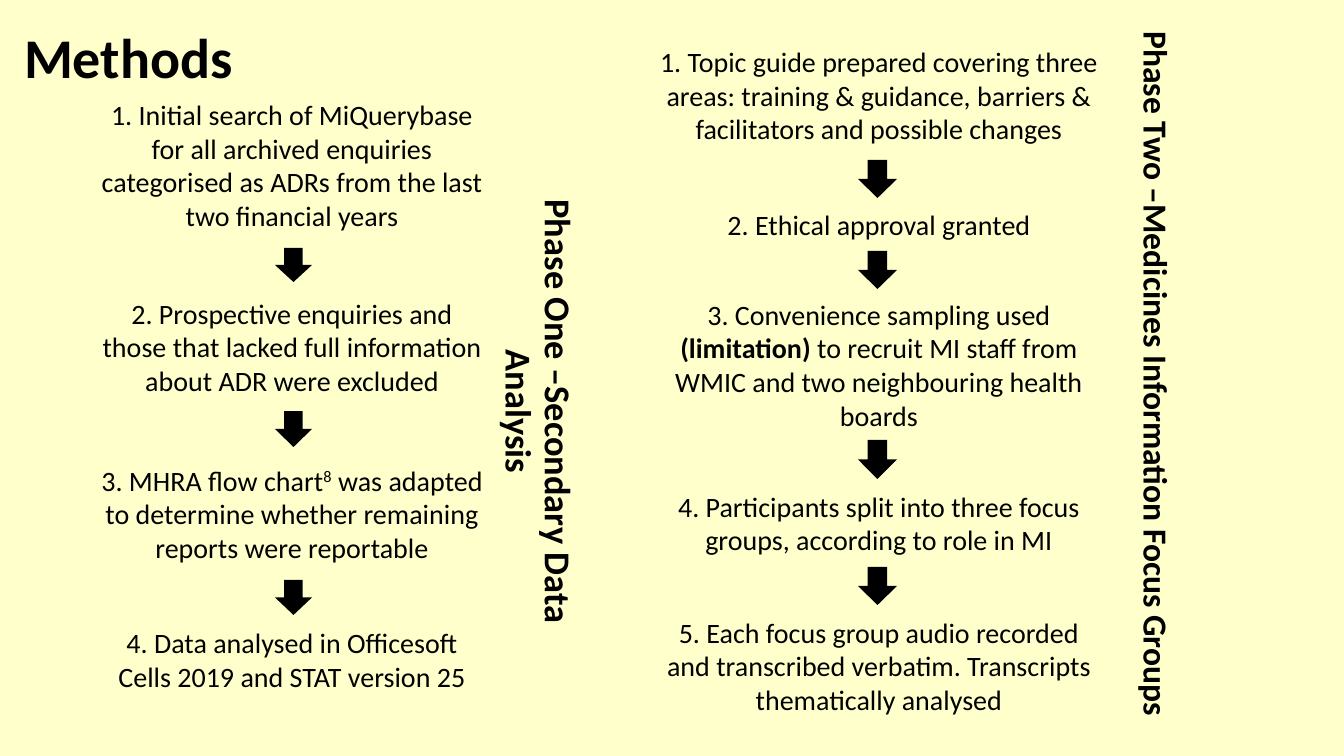
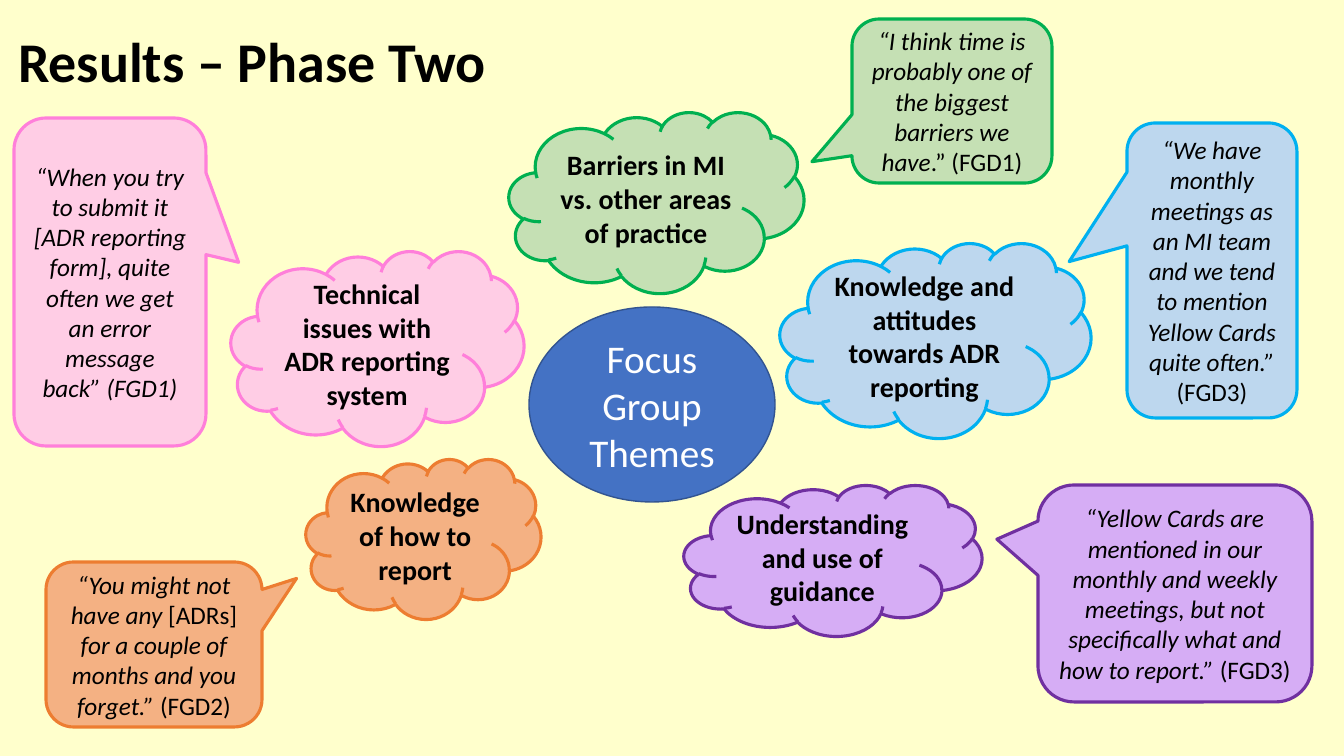
"""Build the study methods and focus group results slides."""
from pptx import Presentation
from pptx.dml.color import RGBColor
from pptx.enum.shapes import MSO_SHAPE
from pptx.enum.text import MSO_ANCHOR, PP_ALIGN
from pptx.util import Emu, Pt

SLIDE_WIDTH, SLIDE_HEIGHT = 1344, 756
EMU_PER_PX = 12192000 / SLIDE_WIDTH

CREAM = RGBColor(0xFF, 0xFF, 0xCC)
BLACK = RGBColor(0x00, 0x00, 0x00)
WHITE = RGBColor(0xFF, 0xFF, 0xFF)
BLUE = RGBColor(0x44, 0x72, 0xC4)
NAVY = RGBColor(0x32, 0x54, 0x91)
LILAC = RGBColor(0xD6, 0xAD, 0xF5)
PURPLE = RGBColor(0x70, 0x30, 0xA0)
PEACH = RGBColor(0xF4, 0xB1, 0x83)
ORANGE = RGBColor(0xED, 0x7D, 0x31)
PALE_BLUE = RGBColor(0xBD, 0xD7, 0xEE)
SKY = RGBColor(0x00, 0xB0, 0xF0)
PALE_PINK = RGBColor(0xFF, 0xCD, 0xE5)
PINK = RGBColor(0xFF, 0x7F, 0xDA)
PALE_GREEN = RGBColor(0xC5, 0xE0, 0xB4)
GREEN = RGBColor(0x00, 0xB0, 0x50)

FRAME_FORMAT = {"word_wrap": True, "vertical_anchor": MSO_ANCHOR.MIDDLE}
TITLE_FONT = {"size": Pt(40), "bold": True}
STEP_FONT = {"size": Pt(20), "bold": False}
THEME_FONT = {"size": Pt(20), "bold": True}
QUOTE_FONT = {"size": Pt(18), "italic": True}
CENTRE_FONT = {"size": Pt(28)}
BOLD = {"bold": True}
UPRIGHT = {"italic": False}
SUPERSCRIPT = {"baseline": "30000"}

METHODS_TITLE = ("Methods", (14, 1, 897, 119))
RESULTS_TITLE = ("Results – Phase Two", (8, 5, 498, 119))

PHASES = [
    {
        "heading": "Phase One –Secondary Data Analysis",
        "heading_box": (482, 134, 110, 555),
        "heading_size": 26,
        "left": 83, "width": 418, "arrow_left": 275, "arrow_width": 37,
        "steps": [
            (82, 166, ["1. Initial search of MiQuerybase for all archived enquiries "
                       "categorised as ADRs from the last two financial years"]),
            (282, 129, ["2. Prospective enquiries and those that lacked full information "
                        "about ADR were excluded"]),
            (447, 133, ["3. MHRA flow chart", ("8", SUPERSCRIPT),
                        " was adapted to determine whether remaining reports were reportable"]),
            (615, 89, ["4. Data analysed in Officesoft Cells 2019 and STAT version 25"]),
        ],
    },
    {
        "heading": "Phase Two –Medicines Information Focus Groups",
        "heading_box": (1091, 10, 127, 727),
        "heading_size": 24,
        "left": 642, "width": 474, "arrow_left": 858, "arrow_width": 39,
        "steps": [
            (30, 130, ["1. Topic guide prepared covering three areas: training & guidance, "
                       "barriers & facilitators and possible changes"]),
            (198, 53, ["2. Ethical approval granted"]),
            (289, 151, ["3. Convenience sampling used ", ("(limitation) ", BOLD),
                        "to recruit MI staff from WMIC and two neighbouring health boards"]),
            (479, 88, ["4. Participants split into three focus groups, according to role in MI"]),
            (605, 121, ["5. Each focus group audio recorded and transcribed verbatim. "
                        "Transcripts thematically analysed"]),
        ],
    },
]

CENTRE = ("Focus Group Themes", (529, 307, 246, 195))
THEMES = [
    {
        "fill": LILAC, "line": PURPLE,
        "theme": "Understanding and use of guidance", "cloud": (684, 485, 298, 151),
        "quote": ["“Yellow Cards are mentioned in our monthly and weekly meetings, "
                  "but not specifically what and how to report.” ", ("(FGD3)", UPRIGHT)],
        "callout": (1038, 485, 274, 217), "pointer": (-0.65, -0.25),
    },
    {
        "fill": PEACH, "line": ORANGE,
        "theme": "Knowledge of how to report", "cloud": (306, 459, 235, 160),
        "quote": ["“You might not have any ", ("[ADRs] ", UPRIGHT),
                  "for a couple of months and you forget.” ", ("(FGD2)", UPRIGHT)],
        "callout": (46, 562, 216, 165), "pointer": (0.66, -0.4),
    },
    {
        "fill": PALE_BLUE, "line": SKY,
        "theme": "Knowledge and attitudes towards ADR reporting", "cloud": (780, 243, 311, 195),
        "quote": ["“We have monthly meetings as an MI team and we tend to mention "
                  "Yellow Cards quite often.”", (" (FGD3)", UPRIGHT)],
        "callout": (1127, 123, 170, 295), "pointer": (-0.84, -0.03),
    },
    {
        "fill": PALE_PINK, "line": PINK,
        "theme": "Technical issues with ADR reporting system", "cloud": (231, 251, 293, 195),
        "quote": ["“When you try to submit it [ADR reporting form], quite often we get "
                  "an error message back” (FGD1)"],
        "callout": (14, 118, 192, 328), "pointer": (0.67, -0.06),
    },
    {
        "fill": PALE_GREEN, "line": GREEN,
        "theme": "Barriers in MI vs. other areas of practice", "cloud": (509, 112, 295, 181),
        "quote": ["“I think time is probably one of the biggest barriers we have",
                  (".” (FGD1)", UPRIGHT)],
        "callout": (852, 19, 200, 164), "pointer": (-0.7, 0.37),
    },
]


def px(length):
    return Emu(round(length * EMU_PER_PX))


def set_attributes(target, values):
    for name, value in values.items():
        setattr(target, name, value)


def write_text(shape, runs, font_format, color=BLACK, align=PP_ALIGN.CENTER, spacing=1.0):
    text_frame = shape.text_frame
    set_attributes(text_frame, FRAME_FORMAT)
    paragraph = text_frame.paragraphs[0]
    set_attributes(paragraph, {"alignment": align, "line_spacing": spacing})
    for item in runs:
        text, changes = (item, {}) if isinstance(item, str) else item
        run = paragraph.add_run()
        run.text = text
        values = {"name": "Calibri", **font_format, **changes}
        baseline = values.pop("baseline", None)
        set_attributes(run.font, values)
        run.font.color.rgb = color
        if baseline:
            run.font._element.set("baseline", baseline)


def add_shape(slide, kind, box, fill=None, line=None, line_width=2.25):
    shape = slide.shapes.add_shape(kind, *map(px, box))
    shape.shadow.inherit = False
    if fill is None:
        shape.fill.background()
    else:
        shape.fill.solid()
        shape.fill.fore_color.rgb = fill
    if line is None:
        shape.line.fill.background()
    else:
        shape.line.color.rgb = line
        shape.line.width = Pt(line_width)
    return shape


def add_titled_slide(presentation, text, box):
    slide = presentation.slides.add_slide(presentation.slide_layouts[5])
    title = slide.shapes.title
    set_attributes(title, dict(zip(("left", "top", "width", "height"), map(px, box))))
    write_text(title, [text], TITLE_FONT, align=PP_ALIGN.LEFT, spacing=0.9)
    return slide


def add_phase(slide, phase):
    heading = slide.shapes.add_textbox(*map(px, phase["heading_box"]))
    heading_font = {"size": Pt(phase["heading_size"]), "bold": True}
    write_text(heading, [phase["heading"]], heading_font, spacing=0.9)
    heading.text_frame._txBody.bodyPr.set("vert", "vert")
    previous_bottom = None
    for top, height, runs in phase["steps"]:
        step = add_shape(slide, MSO_SHAPE.ROUNDED_RECTANGLE,
                         (phase["left"], top, phase["width"], height))
        write_text(step, runs, STEP_FONT)
        if previous_bottom is not None:
            arrow_box = (phase["arrow_left"], previous_bottom,
                         phase["arrow_width"], top - previous_bottom)
            add_shape(slide, MSO_SHAPE.DOWN_ARROW, arrow_box, BLACK)
        previous_bottom = top + height


def add_theme(slide, theme):
    colors = theme["fill"], theme["line"]
    cloud = add_shape(slide, MSO_SHAPE.CLOUD, theme["cloud"], *colors)
    write_text(cloud, [theme["theme"]], THEME_FONT)
    callout = add_shape(slide, MSO_SHAPE.ROUNDED_RECTANGULAR_CALLOUT, theme["callout"], *colors)
    for index, offset in enumerate(theme["pointer"]):
        callout.adjustments[index] = offset
    write_text(callout, theme["quote"], QUOTE_FONT)


def main():
    presentation = Presentation()
    presentation.slide_width = px(SLIDE_WIDTH)
    presentation.slide_height = px(SLIDE_HEIGHT)
    background = presentation.slide_master.background.fill
    background.solid()
    background.fore_color.rgb = CREAM

    methods = add_titled_slide(presentation, *METHODS_TITLE)
    for phase in PHASES:
        add_phase(methods, phase)

    results = add_titled_slide(presentation, *RESULTS_TITLE)
    centre_text, centre_box = CENTRE
    centre = add_shape(results, MSO_SHAPE.OVAL, centre_box, BLUE, NAVY, 1)
    write_text(centre, [centre_text], CENTRE_FONT, WHITE)
    for theme in THEMES:
        add_theme(results, theme)

    presentation.save("out.pptx")


if __name__ == "__main__":
    main()
